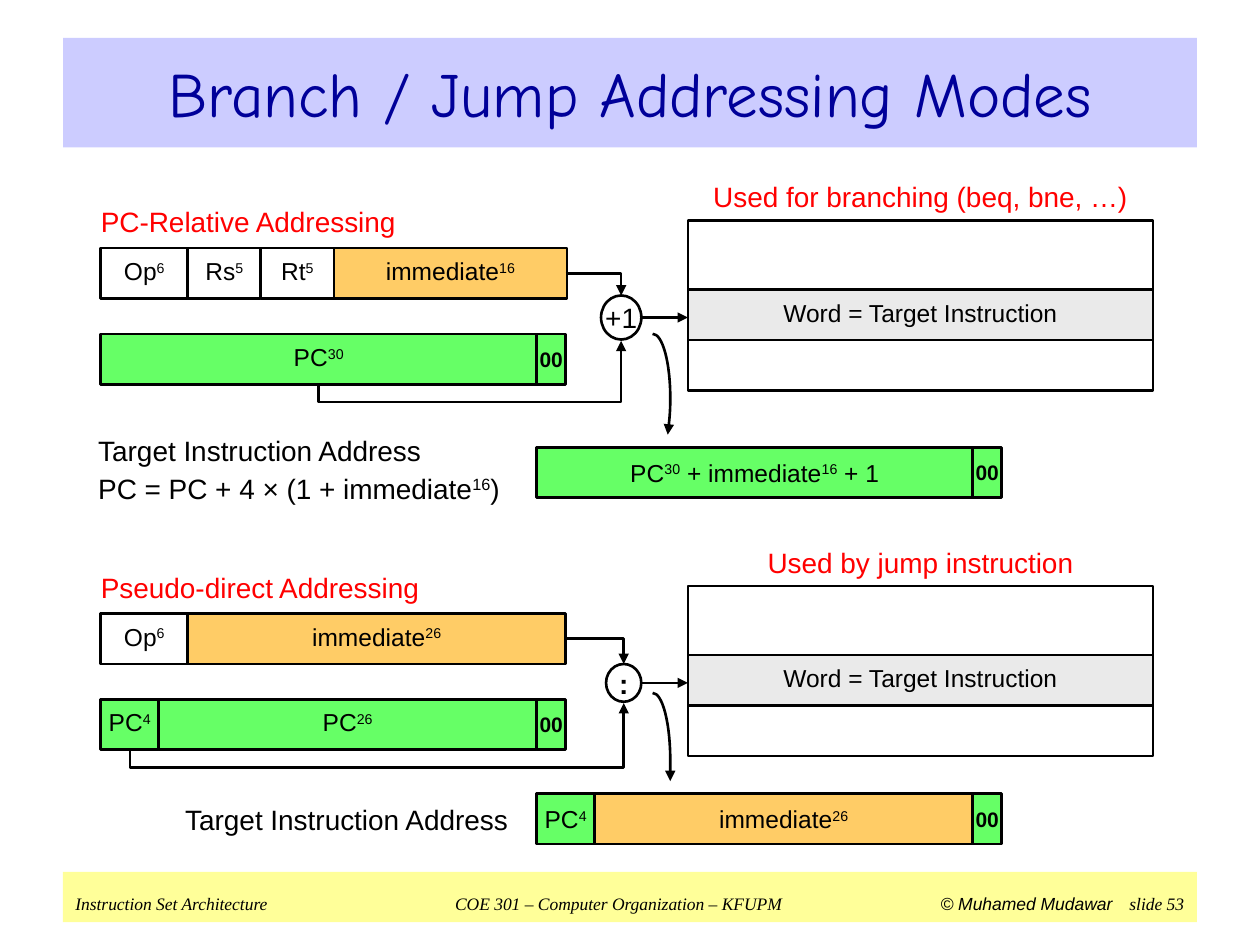
from lxml.etree import SubElement
from pptx import Presentation
from pptx.dml.color import RGBColor
from pptx.enum.shapes import MSO_CONNECTOR, MSO_SHAPE
from pptx.enum.text import MSO_ANCHOR, PP_ALIGN
from pptx.oxml.ns import qn
from pptx.util import Inches, Pt

BLACK, WHITE, RED = "000000", "FFFFFF", "FF0000"
GREEN, ORANGE, GREY = "66FF66", "FFCC66", "EAEAEA"
BAR_HEIGHT = 0.4
LOW_BITS = ("00", 0.23, GREEN)


def color(hex_code):
    return RGBColor.from_string(hex_code)


def box(left, top, width, height):
    return [Inches(length) for length in (left, top, width, height)]


def set_values(target, values):
    for name, value in values.items():
        setattr(target, name, value)


def add_run(paragraph, text, size, hex_code=BLACK, font="Arial", **extra):
    run = paragraph.add_run()
    run.text = text
    run.font.color.rgb = color(hex_code)
    set_values(run.font, {"size": Pt(size), "name": font, **extra})
    return run


def write(shape, text, size=14, hex_code=BLACK, align=PP_ALIGN.CENTER,
          wrap=True, spacing=1.0, **extra):
    """Fill a shape with text; parts between ^ marks are superscripts."""
    frame = shape.text_frame
    set_values(frame, {"margin_left": 0, "margin_right": 0, "margin_top": 0,
                       "margin_bottom": 0, "word_wrap": wrap,
                       "vertical_anchor": MSO_ANCHOR.MIDDLE})
    for index, line in enumerate(text.split("\n")):
        paragraph = frame.add_paragraph() if index else frame.paragraphs[0]
        set_values(paragraph, {"alignment": align, "line_spacing": spacing,
                               "space_before": Pt(2 if index else 0)})
        for part_index, part in enumerate(line.split("^")):
            if part:
                run = add_run(paragraph, part, size, hex_code, **extra)
                if part_index % 2:
                    run._r.get_or_add_rPr().set("baseline", "30000")


def add_label(slide, text, left, top, width, height=0.32, hex_code=BLACK,
              align=PP_ALIGN.LEFT):
    label = slide.shapes.add_textbox(*box(left, top, width, height))
    write(label, text, 16, hex_code, align)


def add_outlined(slide, kind, left, top, width, height, fill=None):
    shape = slide.shapes.add_shape(kind, *box(left, top, width, height))
    shape.shadow.inherit = False
    if fill:
        shape.fill.solid()
        shape.fill.fore_color.rgb = color(fill)
    else:
        shape.fill.background()
    shape.line.color.rgb = color(BLACK)
    shape.line.width = Pt(1.5)
    return shape


def add_bar(slide, left, top, fields, spacing=1.0):
    """Place (text, width, fill) fields side by side."""
    for text, width, fill in fields:
        field = add_outlined(slide, MSO_SHAPE.RECTANGLE, left, top, width,
                             BAR_HEIGHT, fill)
        if text == LOW_BITS[0]:
            write(field, text, 12, bold=True)
        else:
            write(field, text, spacing=spacing)
        left += width


def style_arrow(arrow):
    arrow.line.color.rgb = color(BLACK)
    arrow.line.width = Pt(1.5)
    properties = arrow.element.spPr
    SubElement(properties.find(qn("a:ln")), qn("a:tailEnd"), type="triangle")
    if properties.find(qn("a:effectLst")) is None:
        SubElement(properties, qn("a:effectLst"))


def add_arrow(slide, start, end, preset="line"):
    kind = MSO_CONNECTOR.STRAIGHT if preset == "line" else MSO_CONNECTOR.ELBOW
    arrow = slide.shapes.add_connector(kind, *[Inches(v) for v in start + end])
    geometry = arrow.element.spPr.find(qn("a:prstGeom"))
    geometry.set("prst", preset)
    style_arrow(arrow)
    return arrow, geometry


def add_under_arrow(slide, start, end, drop=0.13):
    """Leave downwards, run right below the bar and rise to the end."""
    rise, run = start[1] - end[1], end[0] - start[0]
    middle_x, middle_y = (start[0] + end[0]) / 2, (start[1] + end[1]) / 2
    arrow, geometry = add_arrow(
        slide, (middle_x + rise / 2, middle_y + run / 2),
        (middle_x - rise / 2, middle_y - run / 2), "bentConnector3")
    arrow.element.spPr.find(qn("a:xfrm")).set("rot", "5400000")
    SubElement(geometry.find(qn("a:avLst")), qn("a:gd"), name="adj1",
               fmla=f"val {round(-drop / rise * 100000)}")


def add_curved_arrow(slide, top, bend, end_x, end_y):
    left, right, bend_y = 5.18, 5.32, top + bend
    points = [(5.26, top), (right, top + 0.45 * bend), (right, bend_y),
              (right, bend_y + 0.35 * (end_y - bend_y)),
              (end_x + 0.01 if end_x < right else right,
               bend_y + 0.7 * (end_y - bend_y)), (end_x, end_y)]
    builder = slide.shapes.build_freeform(Inches(left), Inches(top))
    builder.add_line_segments([(Inches(x), Inches(y)) for x, y in points],
                              close=False)
    curve = builder.convert_to_shape()
    curve.fill.background()
    curve.shadow.inherit = False
    outline = next(curve.element.iter(qn("a:path")))
    segments = outline.findall(qn("a:lnTo"))
    for first in range(0, len(segments), 3):
        bezier = SubElement(outline, qn("a:cubicBezTo"))
        for segment in segments[first:first + 3]:
            bezier.append(segment[0])
            outline.remove(segment)
    style_arrow(curve)


def add_memory(slide, left, top, width, caption):
    add_label(slide, caption, left, top, width, hex_code=RED,
              align=PP_ALIGN.CENTER)
    word = add_outlined(slide, MSO_SHAPE.RECTANGLE, left, top + 0.9, width,
                        BAR_HEIGHT, GREY)
    write(word, "Word = Target Instruction", spacing=0.85)
    add_outlined(slide, MSO_SHAPE.RECTANGLE, left, top + 0.35, width, 1.35)


def add_addressing_mode(slide, left, top, heading, caption, instruction,
                        counter, operator, node_size, source_x):
    bar_width, memory_left, node_right = 3.69, 5.46, 5.09
    axis = top + 0.92
    node_width, node_height = node_size
    node_x = node_right - node_width / 2
    add_label(slide, heading, left, top, bar_width, hex_code=RED)
    add_bar(slide, left, top + 0.37, instruction, 0.85)
    add_bar(slide, left, top + 1.05, counter, 0.85)
    add_memory(slide, memory_left, top - 0.2, bar_width, caption)
    node = add_outlined(slide, MSO_SHAPE.OVAL, node_right - node_width,
                        axis - node_height / 2, node_width, node_height, WHITE)
    write(node, operator, 16, wrap=False, bold=operator == ":")
    add_arrow(slide, (left + bar_width, top + 0.57),
              (node_x, axis - node_height / 2), "bentConnector2")
    add_under_arrow(slide, (source_x, top + 1.46),
                    (node_x, axis + node_height / 2 + 0.01))
    add_arrow(slide, (node_right, axis), (memory_left, axis))


def add_title(slide):
    title = slide.shapes.title
    set_values(title, dict(zip(("left", "top", "width", "height"),
                               box(0.5, 0.3, 9, 0.87))))
    title.fill.solid()
    title.fill.fore_color.rgb = color("CCCCFF")
    write(title, "Branch / Jump Addressing Modes", 36, "000099",
          font="Comic Neue")


def add_footer(slide, left, top, width, height):
    footer = slide.shapes.add_shape(MSO_SHAPE.RECTANGLE,
                                    *box(left, top, width, height))
    footer.shadow.inherit = False
    footer.fill.solid()
    footer.fill.fore_color.rgb = color("FFFF99")
    footer.line.fill.background()
    set_values(footer.text_frame, {"vertical_anchor": MSO_ANCHOR.MIDDLE,
                                   "margin_top": Inches(0.1),
                                   "margin_bottom": 0})
    paragraph = footer.text_frame.paragraphs[0]
    paragraph.alignment = PP_ALIGN.LEFT
    stops = SubElement(paragraph._p.get_or_add_pPr(), qn("a:tabLst"))
    for position, align in ((4.31, "ctr"), (8.23, "r"), (8.8, "r")):
        SubElement(stops, qn("a:tab"), pos=str(Inches(position)), algn=align)
    serif = "Times New Roman"
    for text, font in (
            ("Instruction Set Architecture\t"
             "COE 301 – Computer Organization – KFUPM\t", serif),
            ("© Muhamed Mudawar", "Arial"), ("\tslide 53", serif)):
        add_run(paragraph, text, 10, font=font, italic=True)


def main():
    deck = Presentation()
    deck.slide_width, deck.slide_height = Inches(10), Inches(7.5)
    slide = deck.slides.add_slide(deck.slide_layouts[5])
    add_footer(slide, 0.5, 6.92, 9, 0.4)
    add_title(slide)

    opcode, upper_bits = ("Op^6^", 0.69, WHITE), ("PC^4^", 0.46, GREEN)
    jump_field = ("immediate^26^", 3, ORANGE)
    add_addressing_mode(
        slide, 0.8, 1.6, "PC-Relative Addressing",
        "Used for branching (beq, bne, …)",
        [opcode, ("Rs^5^", 0.58, WHITE), ("Rt^5^", 0.58, WHITE),
         ("immediate^16^", 1.85, ORANGE)],
        [("PC^30^", 3.46, GREEN), LOW_BITS], "+1", (0.32, 0.35), 2.53)
    add_label(slide, "Target Instruction Address\n"
              "PC = PC + 4 × (1 + immediate^16^)", 0.78, 3.45, 3.44, 0.55)
    add_bar(slide, 4.26, 3.55,
            [("PC^30^ + immediate^16^ + 1", 3.46, GREEN), LOW_BITS])
    add_curved_arrow(slide, 2.65, 0.51, 5.3, 3.45)

    add_addressing_mode(
        slide, 0.8, 4.5, "Pseudo-direct Addressing",
        "Used by jump instruction", [opcode, jump_field],
        [upper_bits, ("PC^26^", 3, GREEN), LOW_BITS], ":", (0.28, 0.3), 1.03)
    add_label(slide, "Target Instruction Address", 1.47, 6.3, 2.74, 0.4)
    add_bar(slide, 4.26, 6.3, [upper_bits, jump_field, LOW_BITS])
    add_curved_arrow(slide, 5.5, 0.54, 5.32, 6.2)
    deck.save("out.pptx")


if __name__ == "__main__":
    main()
